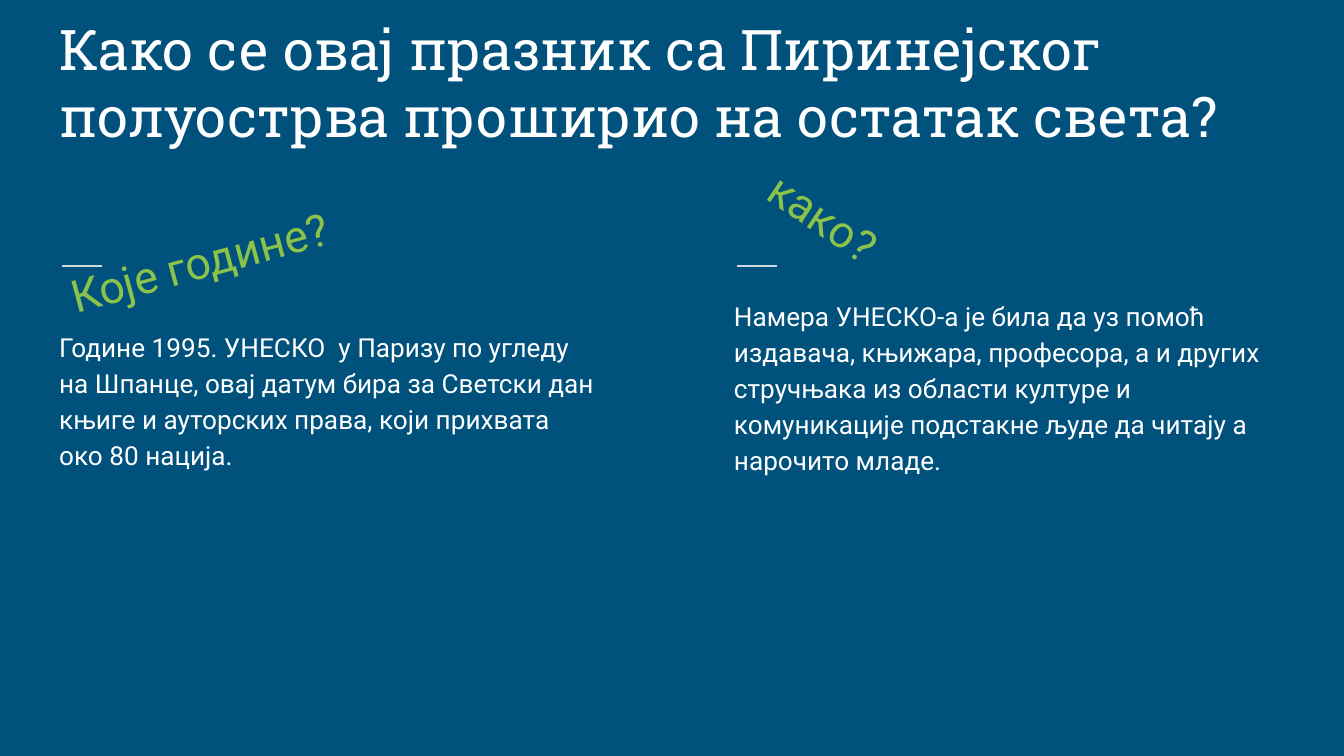
"""Build the slide on how the holiday spread to the rest of the world."""
import lxml.etree
import pptx
import pptx.dml.color
import pptx.enum.shapes
import pptx.enum.text
import pptx.oxml.ns
import pptx.util

Pt = pptx.util.Pt
Anchor = pptx.enum.text.MSO_ANCHOR


def color(value):
    """Return the colour for a hex string."""
    return pptx.dml.color.RGBColor.from_string(value)


class SlideBuilder:
    """Hold the style and the slide being built."""

    background = "00517C"
    white = "FFFFFF"
    accent = "8BC34A"
    rule_color = "CFD8DC"
    inset = 7.2

    def __init__(self, page):
        """Start on a page and paint its background."""
        self.page = page
        page.background.fill.solid()
        page.background.fill.fore_color.rgb = color(self.background)

    def fill_placeholder(self, index, area, text, size, hue, face="Roboto",
                         anchor=Anchor.TOP, rotation=0):
        """Place a placeholder, write its text and return its paragraph."""
        box = self.page.placeholders[index]
        box.left, box.top, box.width, box.height = map(Pt, area)
        box.rotation = rotation
        frame = box.text_frame
        frame.text = text
        frame.word_wrap = True
        frame.auto_size = pptx.enum.text.MSO_AUTO_SIZE.NONE
        frame.vertical_anchor = anchor
        frame.margin_left = frame.margin_right = Pt(self.inset)
        frame.margin_top = frame.margin_bottom = Pt(self.inset)
        para = frame.paragraphs[0]
        para.alignment = pptx.enum.text.PP_ALIGN.LEFT
        para.space_before = Pt(0)
        properties = para._p.get_or_add_pPr()
        properties.set("marL", "0")
        properties.set("indent", "0")
        lxml.etree.SubElement(properties, pptx.oxml.ns.qn("a:buNone"))
        para.font.name = face
        para.font.size = Pt(size)
        para.font.bold = False
        para.font.color.rgb = color(hue)
        return para

    def title(self, area, text):
        """Write the slide title."""
        self.fill_placeholder(0, area, text, 30, self.white, "Roboto Slab", Anchor.BOTTOM)

    def body(self, index, area, text, size, hue, rotation=0):
        """Write a body text with the list spacing."""
        para = self.fill_placeholder(index, area, text, size, hue, rotation=rotation)
        para.line_spacing = 1.15
        para.space_after = Pt(16)

    def heading(self, index, area, text, rotation):
        """Write a tilted column heading."""
        self.body(index, area, text, 24, self.accent, rotation)

    def rule(self, left, top, width):
        """Draw a short horizontal rule."""
        line = self.page.shapes.add_connector(
            pptx.enum.shapes.MSO_CONNECTOR.STRAIGHT,
            Pt(left), Pt(top), Pt(left + width), Pt(top))
        line.line.color.rgb = color(self.rule_color)
        line.line.width = Pt(0.75)
        lxml.etree.SubElement(line._element.spPr, pptx.oxml.ns.qn("a:effectLst"))


def main():
    """Build and save the deck."""
    deck = pptx.Presentation()
    deck.slide_width, deck.slide_height = Pt(720), Pt(405)
    slide = SlideBuilder(deck.slides.add_slide(deck.slide_layouts[4]))
    left, right, width = 24.5, 386, 303
    slide.title((left, 29.5, 671, 57.6),
                "Како се овај празник са Пиринејског полуострва проширио на остатак света?")
    slide.heading(1, (left, 94.3, 309, 41), "Које године?", 344.8)
    slide.body(2, (left, 167.8, width, 216.7),
               "Године 1995. УНЕСКО  у Паризу по угледу на Шпанце, овај датум бира "
               "за Светски дан књиге и ауторских права, који прихвата око 80 нација.",
               14, slide.white)
    slide.heading(3, (right, 154, width, 41), "како?", 34)
    slide.body(4, (right, 151, width, 216.7),
               "Намера УНЕСКО-а је била да уз помоћ издавача, књижара, професора, "
               "а и других стручњака из области културе и комуникације подстакне "
               "људе да читају а нарочито младе.",
               14, slide.white)
    for column in (left, right):
        slide.rule(column + 8.7, 142.5, 21.3)
    deck.save("out.pptx")


if __name__ == "__main__":
    main()
